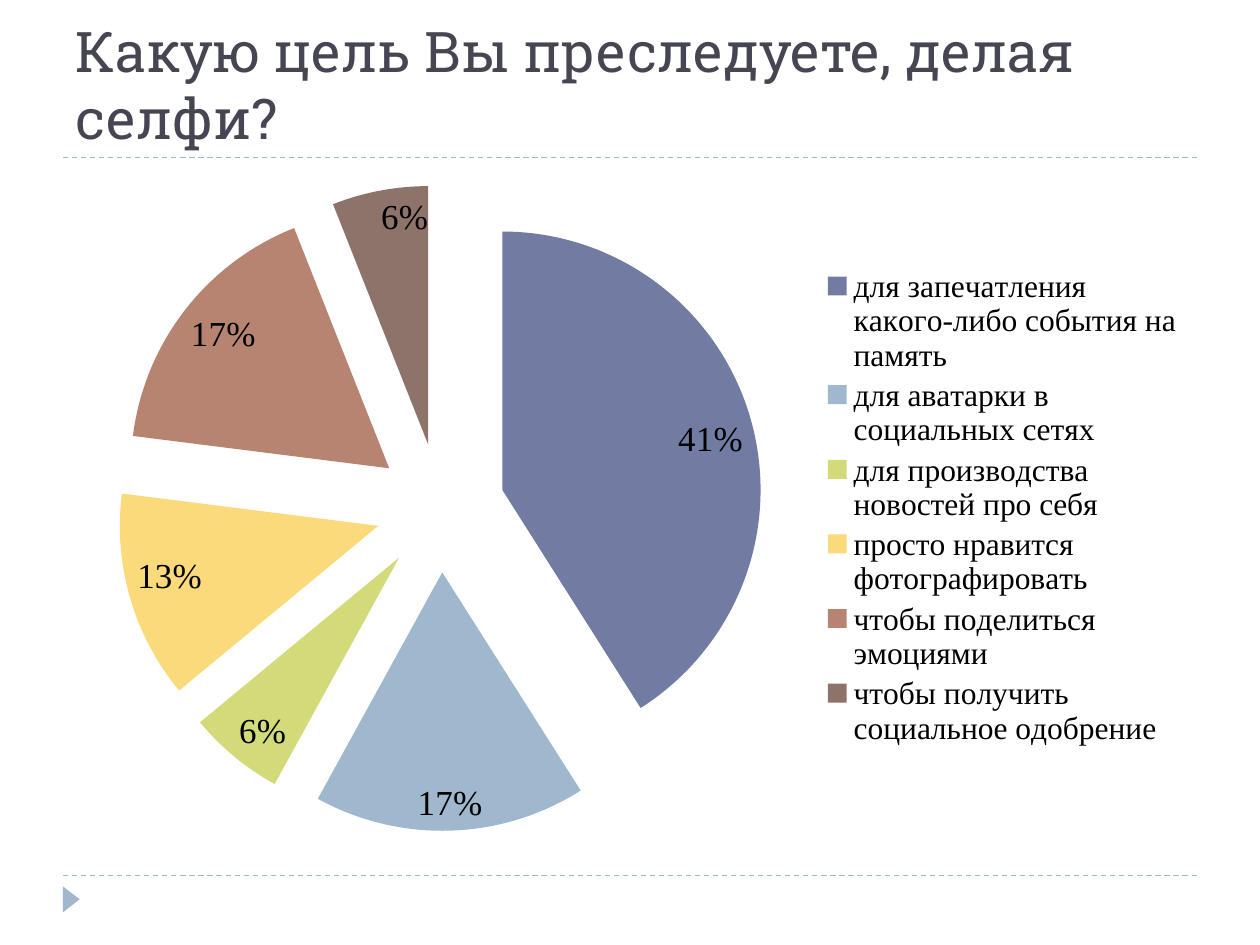
import lxml.etree
import pptx
import pptx.chart.data
import pptx.dml.color
import pptx.enum.chart
import pptx.enum.dml
import pptx.enum.shapes
import pptx.enum.text
import pptx.oxml
import pptx.oxml.ns
import pptx.util
from pptx.util import Cm

LEFT, WIDTH = 1.27, 22.86
ACCENT = "9FB8CD"
LEGEND_FONT = {"name": "Times New Roman", "size": pptx.util.Pt(18)}
LABEL_FONT = {"name": "Times New Roman", "size": pptx.util.Pt(20)}

# Answer, percent, slice colour
ANSWERS = [
    ("для запечатления какого-либо события на память", 41, "727CA3"),
    ("для аватарки в социальных сетях", 17, "9FB8CD"),
    ("для производства новостей про себя", 6, "D2DA7A"),
    ("просто нравится фотографировать", 13, "FADA7A"),
    ("чтобы поделиться эмоциями", 17, "B88472"),
    ("чтобы получить социальное одобрение", 6, "8E736A"),
]


def color(value):
    return pptx.dml.color.RGBColor.from_string(value)


def apply(target, values):
    for name, value in values.items():
        setattr(target, name, value)


def format_font(font, values, tone="000000"):
    apply(font, values)
    font.color.rgb = color(tone)


def add_rule(page, top):
    rule = page.shapes.add_connector(
        pptx.enum.shapes.MSO_CONNECTOR.STRAIGHT,
        Cm(LEFT), Cm(top), Cm(LEFT + WIDTH), Cm(top))
    rule.line.color.rgb = color(ACCENT)
    apply(rule.line, {"width": pptx.util.Pt(0.75),
                      "dash_style": pptx.enum.dml.MSO_LINE.DASH})
    lxml.etree.SubElement(rule.element.spPr, pptx.oxml.ns.qn("a:effectLst"))


def add_marker(page):
    marker = page.shapes.add_shape(
        pptx.enum.shapes.MSO_SHAPE.ISOSCELES_TRIANGLE,
        Cm(1.17), Cm(17.96), Cm(0.53), Cm(0.34))
    marker.rotation = 90
    marker.shadow.inherit = False
    marker.fill.solid()
    marker.fill.fore_color.rgb = color(ACCENT)
    marker.line.fill.background()


def set_title(page, text):
    title = page.shapes.title
    apply(title, {"left": Cm(LEFT), "top": Cm(0.43),
                  "width": Cm(WIDTH), "height": Cm(2.74)})
    apply(title.text_frame, {
        "word_wrap": True,
        "auto_size": pptx.enum.text.MSO_AUTO_SIZE.NONE,
        "vertical_anchor": pptx.enum.text.MSO_ANCHOR.BOTTOM})
    para = title.text_frame.paragraphs[0]
    para.alignment = pptx.enum.text.PP_ALIGN.LEFT
    span = para.add_run()
    span.text = text
    format_font(span.font, {"name": "Roboto Slab", "size": pptx.util.Pt(32)},
                "464653")


def explode(series, percent):
    explosion = pptx.oxml.parse_xml(
        f'<c:explosion {pptx.oxml.ns.nsdecls("c")} val="{percent}"/>')
    series._element.find(pptx.oxml.ns.qn("c:dPt")).addprevious(explosion)


def add_pie(page):
    data = pptx.chart.data.CategoryChartData()
    data.categories = [answer for answer, _, _ in ANSWERS]
    data.add_series("Series 1", [percent for _, percent, _ in ANSWERS])
    chart = page.shapes.add_chart(
        pptx.enum.chart.XL_CHART_TYPE.PIE,
        Cm(LEFT), Cm(3.38), Cm(WIDTH), Cm(13.72), data).chart
    apply(chart, {"has_title": False, "has_legend": True})
    format_font(chart.font, {"name": "Calibri", "size": pptx.util.Pt(18)})

    # Legend
    apply(chart.legend, {
        "position": pptx.enum.chart.XL_LEGEND_POSITION.RIGHT,
        "include_in_layout": False})
    format_font(chart.legend.font, LEGEND_FONT)

    # Slices
    plot = chart.plots[0]
    plot.vary_by_categories = True
    series = plot.series[0]
    for index, (_, _, tone) in enumerate(ANSWERS):
        fill = series.points[index].format.fill
        fill.solid()
        fill.fore_color.rgb = color(tone)
    explode(series, 25)

    # Percent labels
    labels = series.data_labels
    apply(labels, {
        "show_percentage": True, "show_value": False,
        "number_format": "0%", "number_format_is_linked": False,
        "position": pptx.enum.chart.XL_LABEL_POSITION.INSIDE_END})
    format_font(labels.font, LABEL_FONT)


def main():
    deck = pptx.Presentation()
    apply(deck, {"slide_width": Cm(25.4), "slide_height": Cm(19.05)})
    page = deck.slides.add_slide(deck.slide_layouts.get_by_name("Title Only"))
    for top in (17.65, 3.18):
        add_rule(page, top)
    add_marker(page)
    set_title(page, "Какую цель Вы преследуете, делая селфи?")
    add_pie(page)
    deck.save("out.pptx")


if __name__ == "__main__":
    main()
